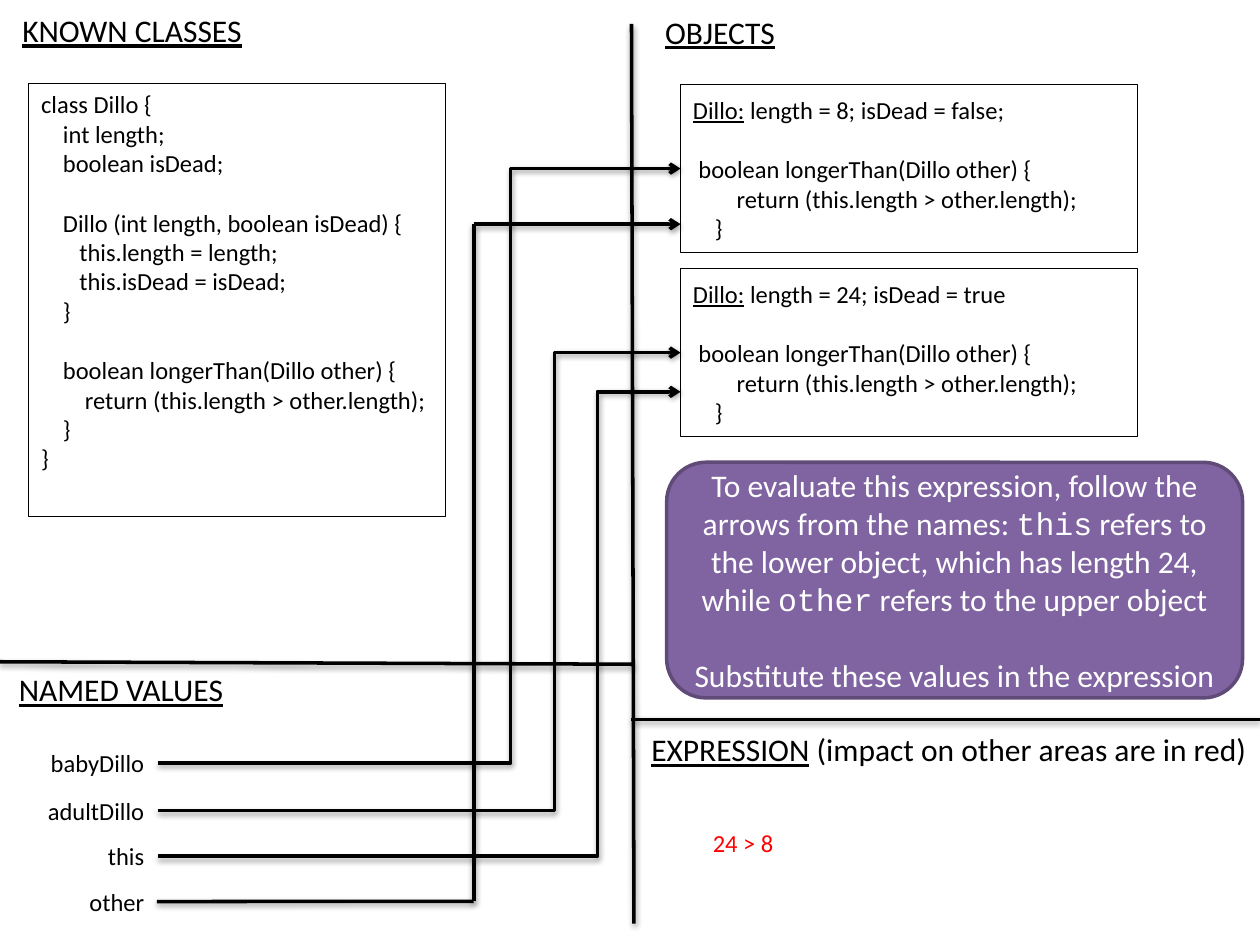
from lxml import etree
from pptx import Presentation, util as u
from pptx.dml.color import RGBColor
from pptx.enum import shapes as s, text as t
from pptx.oxml import parse_xml
from pptx.oxml.ns import nsdecls, qn

HUES = {"ink": "000000", "white": "FFFFFF", "red": "FF0000",
        "note": "8064A2", "edge": "5F4A78"}
GAP = None  # marks an empty line, made with paragraph spacing
SHADOW = (
    f'<a:effectLst {nsdecls("a")}>'
    '<a:outerShdw blurRad="40000" dist="20000" dir="5400000" rotWithShape="0">'
    f'<a:srgbClr val="{HUES["ink"]}"><a:alpha val="38000"/></a:srgbClr>'
    '</a:outerShdw></a:effectLst>')


def hue(name):
    return RGBColor.from_string(HUES[name])


def write(shape, lines, size=14, color="ink", align="LEFT", anchor="TOP", wrap=True):
    """Fill a shape; a line is GAP or (indent in spaces, run, run, ...).

    A run is a string, or a (string, style) pair with style "line" or "code".
    """
    frame = shape.text_frame
    frame.word_wrap = wrap
    frame.auto_size = t.MSO_AUTO_SIZE.NONE if wrap else t.MSO_AUTO_SIZE.SHAPE_TO_FIT_TEXT
    frame.vertical_anchor = t.MSO_ANCHOR[anchor]
    para, space = frame.paragraphs[0], 0
    for num, line in enumerate(lines):
        if line is GAP:
            space = size * 1.22
            continue
        if num:
            para = frame.add_paragraph()
        para.alignment = t.PP_ALIGN[align]
        para.space_before = u.Pt(space)
        space = 0
        indent, *runs = line
        if indent:
            props = para._p.get_or_add_pPr()
            props.set("marL", str(u.Cm(indent * 0.11)))
            props.set("indent", "0")
        for item in runs:
            words, style = (item, "") if isinstance(item, str) else item
            run = para.add_run()
            run.text = words
            font = run.font
            font.name = "Courier New" if style == "code" else "Calibri"
            font.size = u.Pt(size)
            font.color.rgb = hue(color)
            if style == "line":
                font.underline = True
    return shape


class Board:
    def __init__(self, slide):
        self.slide = slide

    def label(self, box, lines, **form):
        return write(self.slide.shapes.add_textbox(*map(u.Cm, box)), lines, **form)

    def title(self, left, top, width, head, *rest):
        return self.label((left, top, width, 1.02), [(0, (head, "line"), *rest)],
                          size=18, wrap=False)

    def box(self, box, lines, kind="RECTANGLE", fill=None, edge="ink", width=0.5, **form):
        shape = self.slide.shapes.add_shape(s.MSO_SHAPE[kind], *map(u.Cm, box))
        shape.shadow.inherit = False
        if fill:
            shape.fill.solid()
            shape.fill.fore_color.rgb = hue(fill)
        else:
            shape.fill.background()
        shape.line.color.rgb = hue(edge)
        shape.line.width = u.Pt(width)
        return write(shape, lines, **form)

    def line(self, start, end, arrow=False, bend=None):
        """Draw a line; bend is the x of an elbow's upright part."""
        kind = s.MSO_CONNECTOR.STRAIGHT if bend is None else s.MSO_CONNECTOR.ELBOW
        link = self.slide.shapes.add_connector(kind, *map(u.Cm, (*start, *end)))
        link.line.color.rgb = hue("ink")
        link.line.width = u.Pt(2)
        props = link._element.spPr
        if bend is not None:
            share = (bend - start[0]) / (end[0] - start[0])
            shape = props.find(qn("a:prstGeom"))
            guides = shape.find(qn("a:avLst"))
            if guides is None:
                guides = etree.SubElement(shape, qn("a:avLst"))
            etree.SubElement(guides, qn("a:gd"), name="adj1",
                             fmla=f"val {round(share * 100000)}")
        if arrow:
            etree.SubElement(props.find(qn("a:ln")), qn("a:tailEnd"), type="arrow")
        props.append(parse_xml(SHADOW))
        return link


def main():
    deck = Presentation()
    deck.slide_width, deck.slide_height = u.Cm(25.4), u.Cm(19.05)
    board = Board(deck.slides.add_slide(deck.slide_layouts[6]))

    # Four areas: headings and dividers
    board.title(0.2, 0.1, 5, "KNOWN CLASSES")
    board.title(13.16, 0.13, 2.77, "OBJECTS")
    board.title(0.13, 13.39, 4.72, "NAMED VALUES")
    board.title(12.88, 14.6, 12.65, "EXPRESSION", " (impact on other areas are in red)")
    board.line((12.73, 0.48), (12.78, 18.62))
    board.line((0, 13.34), (12.78, 13.39))
    board.line((12.73, 14.5), (25.4, 14.5))

    # Known class
    head = "boolean longerThan(Dillo other) {"
    body = "return (this.length > other.length);"
    board.box((0.58, 1.68, 8.41, 8.74), [
        (0, "class Dillo {"), (4, "int length;"), (4, "boolean isDead;"), GAP,
        (4, "Dillo (int length, boolean isDead) {"),
        (7, "this.length = length;"), (7, "this.isDead = isDead;"), (4, "}"), GAP,
        (4, head), (8, body), (4, "}"), (0, "}")])

    # Objects
    left, high = 13.72, 3.4
    for top, state in ((1.7, " length = 8; isDead = false;"),
                       (5.41, " length = 24; isDead = true")):
        board.box((left, top, 9.22, high), [
            (0, ("Dillo:", "line"), state), GAP, (1, head), (8, body), (4, "}")],
            anchor="MIDDLE")

    # Named values
    names = {}
    for top, name in ((14.78, "babyDillo"), (15.75, "adultDillo"),
                      (16.66, "this"), (17.58, "other")):
        names[name] = board.label((0.58, top, 2.58, 1.19), [(0, name)],
                                  align="RIGHT", anchor="MIDDLE")

    # Arrows from names to objects
    for low, bend, end in ((15.38, 10.29, 3.4), (16.34, 11.18, 7.11), (17.26, 12.04, 7.9)):
        board.line((3.18, low), (left, end), arrow=True, bend=bend)
    turn, low, end = 9.55, 18.17, 4.52
    board.line((3.18, low), (turn, low)).begin_connect(names["other"], 3)
    board.line((turn, low), (turn, end))
    board.line((turn, end), (left, end), arrow=True)

    # Explanation
    board.box((13.44, 9.32, 11.61, 4.75), [
        (0, "To evaluate this expression, follow the arrows from the names: ",
         ("this", "code"), " refers to the lower object, which has length 24, while ",
         ("other", "code"), " refers to the upper object"), GAP,
        (0, "Substitute these values in the expression")],
        kind="ROUNDED_RECTANGLE", fill="note", edge="edge", width=2,
        size=18, color="white", align="CENTER", anchor="MIDDLE")

    # Expression
    term = board.label((14.12, 15.62, 8, 2.92), [(0, "24 > 8")],
                       color="red", anchor="MIDDLE")
    term.text_frame.margin_bottom = u.Cm(0.3)

    deck.save("out.pptx")


if __name__ == "__main__":
    main()
